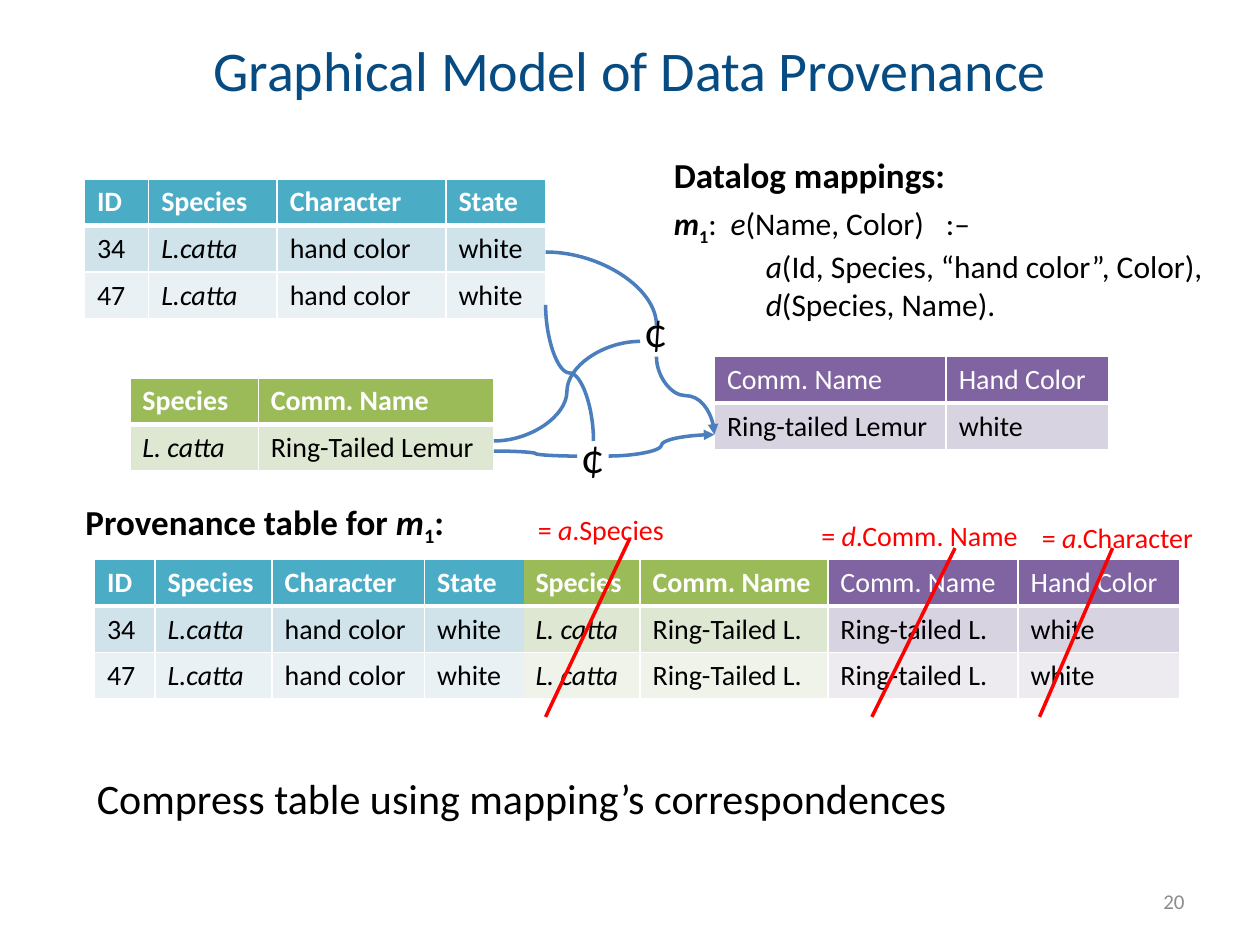
import pptx
import pptx.util
import pptx.dml.color
import pptx.enum.shapes
import pptx.enum.text
import pptx.oxml.ns
import lxml.etree

Inches = pptx.util.Inches
Pt = pptx.util.Pt
RGB = pptx.dml.color.RGBColor
Align = pptx.enum.text.PP_ALIGN
Anchor = pptx.enum.text.MSO_ANCHOR
Line = pptx.enum.shapes.MSO_CONNECTOR
qn = pptx.oxml.ns.qn

BLACK, WHITE = RGB(0, 0, 0), RGB(255, 255, 255)
NAVY, GRAY = RGB(0x06, 0x4C, 0x83), RGB(0x8C, 0x8C, 0x8C)
RED, BLUE = RGB(255, 0, 0), RGB(0x4B, 0x7E, 0xBC)
# Table palettes: header, odd row, even row
TEAL = RGB(0x4B, 0xAC, 0xC6), RGB(0xD0, 0xE3, 0xEA), RGB(0xE9, 0xF1, 0xF5)
GREEN = RGB(0x9B, 0xBB, 0x59), RGB(0xDE, 0xE7, 0xD1), RGB(0xEF, 0xF3, 0xEA)
PURPLE = RGB(0x80, 0x64, 0xA2), RGB(0xD8, 0xD3, 0xE0), RGB(0xED, 0xEA, 0xF0)


class Board:
    font = "Calibri"
    row = 0.37

    def __init__(self, deck):
        self.slide = deck.slides.add_slide(deck.slide_layouts[5])
        self.shapes = self.slide.shapes

    def fill(self, par, runs, size, color, face=None):
        """Runs are (text, marks) pairs; marks: b bold, i italic, s subscript."""
        for text, marks in runs:
            run = par.add_run()
            run.text = text
            run.font.bold, run.font.italic = "b" in marks, "i" in marks
            if "s" in marks:
                run.font._element.set("baseline", "-25000")
        for font in [par.font] + [run.font for run in par.runs]:
            font.name, font.size = face or self.font, Pt(size)
            font.color.rgb = color

    def title(self, text, x, y, w, h):
        box = self.shapes.title
        box.left, box.top, box.width, box.height = map(Inches, (x, y, w, h))
        box.text_frame.vertical_anchor = Anchor.MIDDLE
        par = box.text_frame.paragraphs[0]
        par.alignment = Align.CENTER
        self.fill(par, [(text, "")], 32, NAVY)

    def text(self, x, y, w, h, lines, size, color=BLACK, align=Align.LEFT):
        box = self.shapes.add_textbox(*map(Inches, (x, y, w, h)))
        frame = box.text_frame
        frame.word_wrap = True
        for i, runs in enumerate(lines):
            par = frame.add_paragraph() if i else frame.paragraphs[0]
            par.alignment = align
            self.fill(par, runs, size, color)
        return frame

    def table(self, x, y, widths, rows, hues, bold=True):
        size = len(rows), len(widths)
        area = map(Inches, (x, y, sum(widths), self.row * len(rows)))
        grid = self.shapes.add_table(*size, *area).table
        for col, width in zip(grid.columns, widths):
            col.width = Inches(width)
        for r, row in enumerate(rows):
            grid.rows[r].height = Inches(self.row)
            for c, text in enumerate(row):
                cell = grid.cell(r, c)
                cell.fill.solid()
                cell.fill.fore_color.rgb = hues[r]
                marks = "b" if bold and r == 0 else "i" if text.startswith("L.") else ""
                par = cell.text_frame.paragraphs[0]
                self.fill(par, [(text, marks)], 16, BLACK if r else WHITE)
                self.edge(cell, r, c == len(row) - 1)

    def edge(self, cell, r, last):
        props = cell._tc.get_or_add_tcPr()
        sides = {"lnL": 1, "lnR": 0 if last else 1, "lnT": 3 if r == 1 else 1, "lnB": 1 if r else 3}
        for i, (side, width) in enumerate(sides.items()):
            line = lxml.etree.Element(qn("a:" + side), w=str(Pt(width)))
            if width:
                fill = lxml.etree.SubElement(line, qn("a:solidFill"))
                lxml.etree.SubElement(fill, qn("a:srgbClr"), val=str(WHITE))
            else:
                lxml.etree.SubElement(line, qn("a:noFill"))
            props.insert(i, line)

    def line(self, x1, y1, x2, y2, color, kind=Line.STRAIGHT, arrow=False):
        link = self.shapes.add_connector(kind, *map(Inches, (x1, y1, x2, y2)))
        link.line.color.rgb, link.line.width = color, Pt(2)
        props = link._element.spPr
        if arrow:
            lxml.etree.SubElement(props.find(qn("a:ln")), qn("a:tailEnd"), type="triangle")
        lxml.etree.SubElement(props, qn("a:effectLst"))
        return props

    def curve(self, x1, y1, x2, y2, arrow=False):
        return self.line(x1, y1, x2, y2, BLUE, Line.CURVE, arrow)

    def drop(self, x1, y1, x2, y2, arrow=False):
        """A curve that leaves and arrives vertically: a quarter turn."""
        mx, my, dx, dy = (x1 + x2) / 2, (y1 + y2) / 2, (x2 - x1) / 2, (y2 - y1) / 2
        props = self.curve(mx + dy, my - dx, mx - dy, my + dx, arrow)
        props.find(qn("a:xfrm")).set("rot", str(270 * 60000))

    def node(self, x, y, sign):
        area = map(Inches, (x, y, 0.25, 0.25))
        oval = self.shapes.add_shape(pptx.enum.shapes.MSO_SHAPE.OVAL, *area)
        oval.shadow.inherit = False
        oval.fill.background()
        oval.line.fill.background()
        frame = oval.text_frame
        frame.margin_left = frame.margin_right = frame.margin_top = frame.margin_bottom = 0
        frame.word_wrap, frame.vertical_anchor = False, Anchor.MIDDLE
        frame.paragraphs[0].alignment = Align.CENTER
        self.fill(frame.paragraphs[0], [(sign, "")], 24, BLACK, "Lato")


def main():
    deck = pptx.Presentation()
    deck.slide_width, deck.slide_height = Inches(10), Inches(7.5)
    board = Board(deck)
    board.title("Graphical Model of Data Provenance", 0.5, -0.08, 9, 1.25)
    page = board.text(7.17, 6.95, 2.33, 0.4, [[("20", "")]], 12, GRAY, Align.RIGHT)
    page.vertical_anchor = Anchor.MIDDLE

    # Source and target tables
    traits = [["ID", "Species", "Character", "State"]]
    traits += [[key, "L.catta", "hand color", "white"] for key in ("34", "47")]
    names, colors = ["Species", "Comm. Name"], ["Comm. Name", "Hand Color"]
    board.table(1.03, 3, [1.02, 1.86], [names, ["L. catta", "Ring-Tailed Lemur"]], GREEN)
    board.table(0.67, 1.42, [0.51, 1.02, 1.34, 0.79], traits, TEAL)
    board.table(5.67, 2.83, [1.84, 1.28], [colors, ["Ring-tailed Lemur", "white"]], PURPLE, False)

    # Provenance table in three parts
    top = 4.44
    board.table(4.15, top, [0.93, 1.51], [names] + [["L. catta", "Ring-Tailed L."]] * 2, GREEN)
    board.table(0.75, top, [0.48, 0.93, 1.21, 0.79], traits, TEAL)
    board.table(6.57, top, [1.51, 1.28], [colors] + [["Ring-tailed L.", "white"]] * 2, PURPLE, False)

    # Datalog rule
    rule = board.text(5.25, 1.57, 4.5, 1.01, [
        [("m", "bi"), ("1", "bs"), (":", ""), ("\te", "i"), ("(Name, Color)\t:–", "")],
        [("a", "i"), ("(Id, Species, “hand color”, Color),", "")],
        [("d", "i"), ("(Species, Name).", "")],
    ], 18)
    head, *body = [par._p.get_or_add_pPr() for par in rule.paragraphs]
    tabs = lxml.etree.Element(qn("a:tabLst"))
    head.insert(0, tabs)
    for stop in (0.45, 2.16):
        lxml.etree.SubElement(tabs, qn("a:tab"), pos=str(Inches(stop)), algn="l")
    for props in body:
        props.set("marL", str(Inches(0.73)))

    # Headings and closing line
    board.text(0.58, 3.92, 4.5, 0.44, [[("Provenance table for ", "b"), ("m", "bi"), ("1", "bs"), (":", "b")]], 20)
    board.text(5.25, 1.17, 4.17, 0.44, [[("Datalog mappings:", "b")]], 20)
    board.text(0.67, 6.08, 8.42, 0.5, [[("Compress table using mapping’s correspondences", "")]], 24)

    # Derivation curves
    bend = board.curve(4.33, 2, 5.21, 2.58)
    bend.find(qn("a:prstGeom")).set("prst", "curvedConnector2")
    board.curve(3.92, 3.5, 5.08, 2.71)
    board.curve(3.92, 3.58, 4.58, 3.62)
    board.drop(4.33, 2.42, 4.71, 3.5)
    board.drop(5.21, 2.83, 5.67, 3.45, True)
    board.curve(4.83, 3.62, 5.67, 3.45, True)

    # Struck-out columns and what they equal
    for x1, y1, x2 in ((7.58, 4.35, 6.92), (8.83, 4.35, 8.25), (5, 4.27, 4.33)):
        board.line(x1, y1, x2, 5.69, RED)
    for x, y, var, name in ((4.17, 4.02, "a", ".Species"), (6.42, 4.07, "d", ".Comm. Name"),
                            (8.17, 4.08, "a", ".Character")):
        board.text(x, y, 2, 0.37, [[("= ", ""), (var, "i"), (name, "")]], 16, RED)

    # Join nodes
    board.node(5.08, 2.5, "¢")
    board.node(4.58, 3.5, "¢")
    deck.save("out.pptx")


if __name__ == "__main__":
    main()
